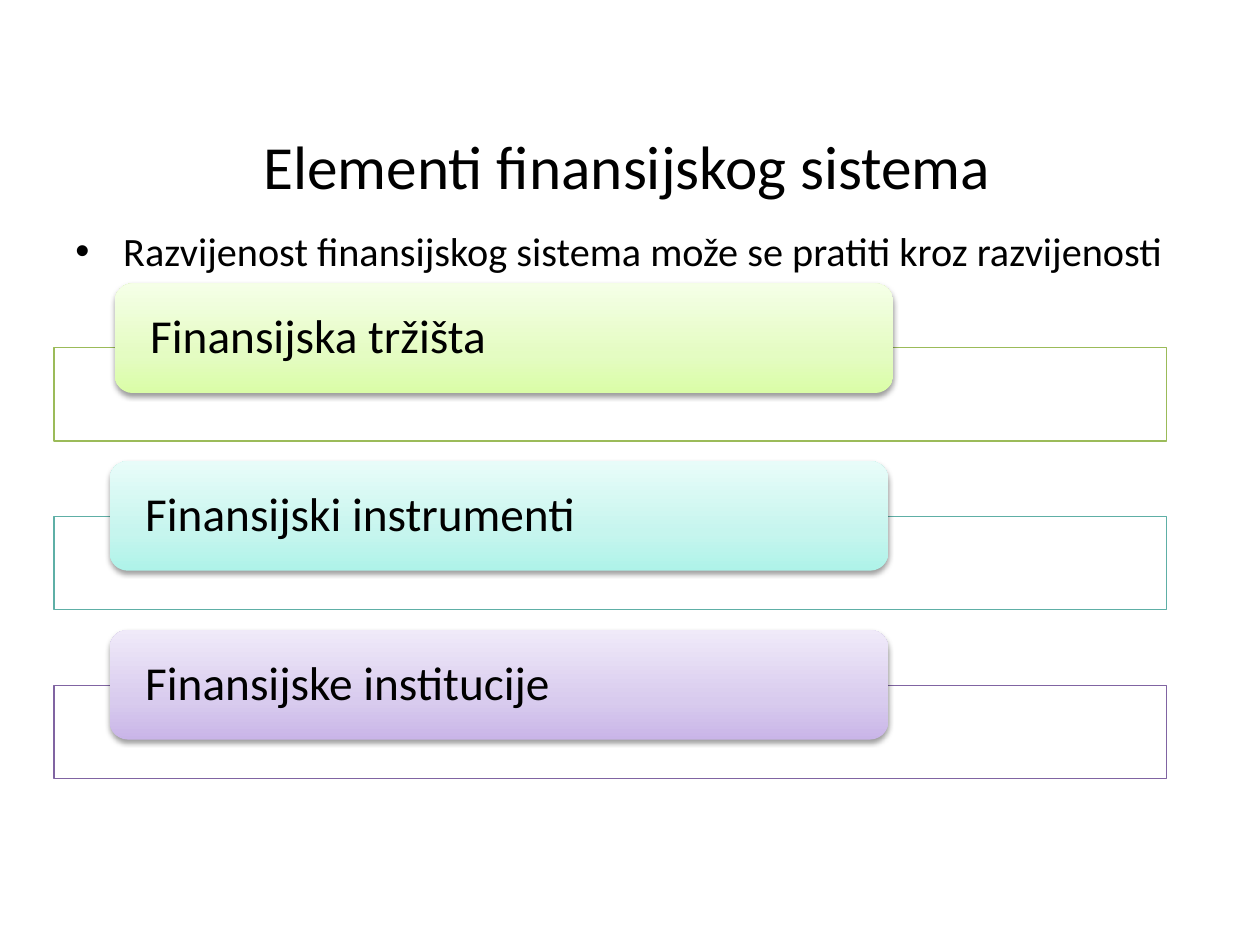
from lxml import etree
from pptx import Presentation
from pptx import util as u
from pptx.dml.color import RGBColor
from pptx.enum import shapes, text
from pptx.oxml import ns

COLORS = {"text": "000000", "bar": "FFFFFF", "shadow": "000000"}
FONT = "Calibri"
TITLE = "Elementi finansijskog sistema"
INTRO = "Razvijenost finansijskog sistema može se pratiti kroz razvijenosti"
ELEMENTS = [
    {"label": "Finansijska tržišta", "line": "9BBB59",
     "gradient": ("DAFDA7", "E4FCC2", "F5FFE7"), "nudge": (0.04, -0.07)},
    {"label": "Finansijski instrumenti", "line": "5EAFA6",
     "gradient": ("AEF3E9", "C6F5EE", "E8FCF9"), "nudge": (0, 0)},
    {"label": "Finansijske institucije", "line": "8064A2",
     "gradient": ("C9B5E8", "D8CBEE", "F0EAF9"), "nudge": (0, 0)},
]
GRADIENT_STOPS = (0, 35, 100)
BAR_LEFT, BAR_TOP, BAR_WIDTH, BAR_HEIGHT = 0.43, 2.76, 8.83, 0.74
CARD_LEFT, CARD_RISE, CARD_WIDTH, CARD_HEIGHT = 0.87, 0.44, 6.18, 0.87
PITCH = 1.34


def inches(*values):
    return [u.Inches(value) for value in values]


def add_child(parent, tag, **attributes):
    return etree.SubElement(parent, ns.qn(tag), attributes)


def add_color(parent, color, alpha=None):
    element = add_child(parent, "a:srgbClr", val=color)
    if alpha is not None:
        add_child(element, "a:alpha", val=str(alpha * 1000))


def write(paragraph, content, size):
    run = paragraph.add_run()
    run.text = content
    run.font.size = u.Pt(size)
    run.font.name = FONT
    run.font.color.rgb = RGBColor.from_string(COLORS["text"])


def add_text_box(slide, box, anchor):
    frame = slide.shapes.add_textbox(*inches(*box)).text_frame
    frame.word_wrap = True
    frame.vertical_anchor = anchor
    return frame.paragraphs[0]


def add_bar(slide, top, line_color):
    bar = slide.shapes.add_shape(
        shapes.MSO_SHAPE.RECTANGLE, *inches(BAR_LEFT, top, BAR_WIDTH, BAR_HEIGHT))
    bar.shadow.inherit = False
    bar.fill.solid()
    bar.fill.fore_color.rgb = RGBColor.from_string(COLORS["bar"])
    color = bar.fill._xPr.find(".//" + ns.qn("a:srgbClr"))
    add_child(color, "a:alpha", val="90000")
    bar.line.color.rgb = RGBColor.from_string(line_color)
    bar.line.width = u.Pt(0.75)


def add_card(slide, left, top, label, gradient):
    card = slide.shapes.add_shape(
        shapes.MSO_SHAPE.ROUNDED_RECTANGLE, *inches(left, top, CARD_WIDTH, CARD_HEIGHT))
    card.line.fill.background()
    card.fill.gradient()
    card.fill.gradient_angle = 90
    properties = card._element.spPr
    stops = properties.find(".//" + ns.qn("a:gsLst"))
    for stop in list(stops):
        stops.remove(stop)
    for position, color in zip(GRADIENT_STOPS, gradient):
        add_color(add_child(stops, "a:gs", pos=str(position * 1000)), color)

    card.shadow.inherit = False
    shadow = add_child(properties.find(ns.qn("a:effectLst")), "a:outerShdw",
                       blurRad=str(u.Pt(3.1)), dist=str(u.Pt(1.6)),
                       dir="5400000", rotWithShape="0")
    add_color(shadow, COLORS["shadow"], 38)

    frame = card.text_frame
    frame.word_wrap = True
    frame.vertical_anchor = text.MSO_ANCHOR.MIDDLE
    frame.margin_left = frame.margin_right = u.Inches(0.24)
    frame.margin_top = frame.margin_bottom = 0
    paragraph = frame.paragraphs[0]
    paragraph.alignment = text.PP_ALIGN.LEFT
    paragraph.line_spacing = 0.9
    write(paragraph, label, 27)


def main():
    presentation = Presentation()
    presentation.slide_width, presentation.slide_height = inches(10, 7.5)
    slide = presentation.slides.add_slide(presentation.slide_layouts[6])

    title = add_text_box(slide, (0.98, 0.84, 8, 0.94), text.MSO_ANCHOR.MIDDLE)
    title.alignment = text.PP_ALIGN.CENTER
    write(title, TITLE, 35)

    intro = add_text_box(slide, (0.5, 1.75, 9, 4.95), text.MSO_ANCHOR.TOP)
    properties = intro._p.get_or_add_pPr()
    properties.set("marL", str(u.Inches(0.38)))
    properties.set("indent", str(u.Inches(-0.38)))
    add_child(properties, "a:buFont", typeface="Arial")
    add_child(properties, "a:buChar", char="•")
    write(intro, INTRO, 23)

    for index, element in enumerate(ELEMENTS):
        top = BAR_TOP + index * PITCH
        shift_x, shift_y = element["nudge"]
        add_bar(slide, top, element["line"])
        add_card(slide, CARD_LEFT + shift_x, top - CARD_RISE + shift_y,
                 element["label"], element["gradient"])

    presentation.save("out.pptx")


if __name__ == "__main__":
    main()
